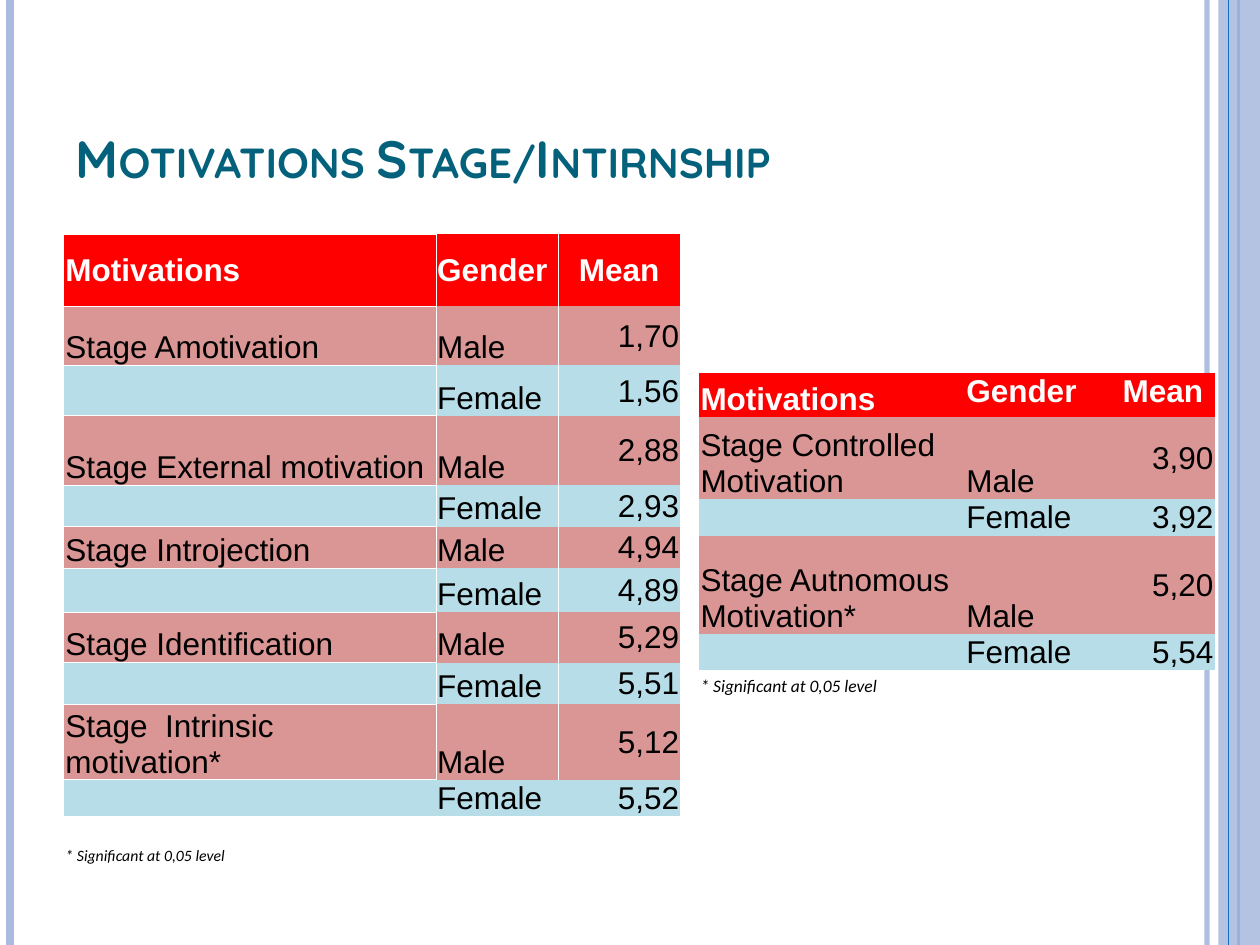
from lxml import etree
from pptx import Presentation
from pptx.dml.color import RGBColor
from pptx.enum.shapes import MSO_CONNECTOR, MSO_SHAPE
from pptx.enum.text import MSO_ANCHOR, PP_ALIGN
from pptx.oxml.ns import qn
from pptx.util import Inches, Pt

LINE = MSO_CONNECTOR.STRAIGHT
RECTANGLE = MSO_SHAPE.RECTANGLE
TOP, MIDDLE, BOTTOM = MSO_ANCHOR.TOP, MSO_ANCHOR.MIDDLE, MSO_ANCHOR.BOTTOM
LEFT, CENTER, RIGHT = PP_ALIGN.LEFT, PP_ALIGN.CENTER, PP_ALIGN.RIGHT

LAVENDER = RGBColor(0xAB, 0xBB, 0xDF)
BLUE = RGBColor(0x0F, 0x6F, 0xC6)
TEAL = RGBColor(0x04, 0x61, 0x7B)
RED = RGBColor(0xFF, 0x00, 0x00)
ROSE = RGBColor(0xDA, 0x96, 0x94)
PALE_BLUE = RGBColor(0xB7, 0xDE, 0xE8)
WHITE = RGBColor(0xFF, 0xFF, 0xFF)
BLACK = RGBColor(0x00, 0x00, 0x00)

PLAIN_TABLE_STYLE = "{2D5ABB26-0587-4C30-8999-92F81FD0307C}"
HEADINGS = ("Motivations", "Gender", "Mean")
NOTE = "* Significant at 0,05 level"

# Motivation, mean of males, mean of females
STAGE_MEANS = [
    ("Stage Amotivation", "1,70", "1,56"),
    ("Stage External motivation", "2,88", "2,93"),
    ("Stage Introjection", "4,94", "4,89"),
    ("Stage Identification", "5,29", "5,51"),
    ("Stage  Intrinsic motivation*", "5,12", "5,52"),
]
COMBINED_MEANS = [
    ("Stage Controlled Motivation", "3,90", "3,92"),
    ("Stage Autnomous Motivation*", "5,20", "5,54"),
]


def set_alpha(fill_parent, percent):
    color = fill_parent.find(f".//{qn('a:solidFill')}/{qn('a:srgbClr')}")
    etree.SubElement(color, qn("a:alpha")).set("val", str(percent * 1000))


def add_rule(slide, x, color, width, alpha=None):
    rule = slide.shapes.add_connector(LINE, Inches(x), 0, Inches(x), Inches(7.5))
    rule.line.color.rgb = color
    rule.line.width = Pt(width)
    properties = rule._element.spPr
    if alpha:
        set_alpha(properties, alpha)
    etree.SubElement(properties, qn("a:effectLst"))


def add_side_band(slide):
    band = slide.shapes.add_shape(RECTANGLE, Inches(9.67), 0, Inches(0.33), Inches(7.5))
    band.shadow.inherit = False
    band.fill.solid()
    band.fill.fore_color.rgb = LAVENDER
    band.line.fill.background()
    set_alpha(band._element.spPr, 87)


def set_title(slide, text):
    title = slide.shapes.title
    title.left, title.top = Inches(0.5), Inches(0.3)
    title.width, title.height = Inches(8.17), Inches(1.25)
    title.text_frame.vertical_anchor = BOTTOM
    paragraph = title.text_frame.paragraphs[0]
    paragraph.alignment = LEFT
    run = paragraph.add_run()
    run.text = text
    run.font.name, run.font.size, run.font.bold = "Quicksand", Pt(30), True
    run.font.color.rgb = TEAL
    run._r.get_or_add_rPr().set("cap", "small")


def add_borders(cell, sides):
    """Thin white borders; sides must come in the order L, R, T, B."""
    for side in sides:
        border = etree.SubElement(cell._tc.get_or_add_tcPr(), qn(f"a:ln{side}"))
        border.set("w", str(Pt(0.5)))
        fill = etree.SubElement(border, qn("a:solidFill"))
        etree.SubElement(fill, qn("a:srgbClr")).set("val", str(WHITE))


def fill_cell(cell, text, fill, anchor=BOTTOM, align=LEFT, size=18,
              font_name="Arial", color=BLACK, bold=False, italic=False):
    cell.margin_left = cell.margin_right = cell.margin_top = Inches(0.01)
    cell.margin_bottom = 0
    cell.vertical_anchor = anchor
    if fill is None:
        cell.fill.background()
    else:
        cell.fill.solid()
        cell.fill.fore_color.rgb = fill
    cell.text = text
    paragraph = cell.text_frame.paragraphs[0]
    paragraph.alignment = align
    font = paragraph.font
    font.name, font.size, font.bold, font.italic = font_name, Pt(size), bold, italic
    font.color.rgb = color
    if not text:
        # An empty cell takes its line height from the end mark
        end_mark = etree.SubElement(paragraph._p, qn("a:endParaRPr"))
        end_mark.set("sz", str(size * 100))


def add_means_table(slide, left, top, widths, heights, means,
                    heading_anchors, note_size, ruled=False):
    table = slide.shapes.add_table(
        len(heights), len(widths), Inches(left), Inches(top),
        Inches(sum(widths)), Inches(sum(heights))).table
    table.first_row = table.horz_banding = False
    table._tbl.tblPr.find(qn("a:tableStyleId")).text = PLAIN_TABLE_STYLE
    for column, width in zip(table.columns, widths):
        column.width = Inches(width)
    for row, height in zip(table.rows, heights):
        row.height = Inches(height)

    # White rules around the motivations column
    if ruled:
        last = 2 * len(means)
        for row in range(last):
            add_borders(table.cell(row, 0), "RTB")
            add_borders(table.cell(row, 1), "L")
        add_borders(table.cell(last, 0), "T")

    # Heading row
    for column, (heading, anchor) in enumerate(zip(HEADINGS, heading_anchors)):
        fill_cell(table.cell(0, column), heading, RED, anchor,
                  CENTER if heading == "Mean" else LEFT, color=WHITE, bold=True)

    # A male and a female row for each motivation
    row = 1
    for motivation, male, female in means:
        for label, gender, mean, fill in ((motivation, "Male", male, ROSE),
                                          ("", "Female", female, PALE_BLUE)):
            fill_cell(table.cell(row, 0), label, fill)
            fill_cell(table.cell(row, 1), gender, fill)
            fill_cell(table.cell(row, 2), mean, fill, MIDDLE, RIGHT)
            row += 1

    # Note row
    for column, text in enumerate((NOTE, "", "")):
        fill_cell(table.cell(row, column), text, None, size=note_size,
                  font_name="Calibri", italic=True)


def main():
    presentation = Presentation()
    presentation.slide_width, presentation.slide_height = Inches(10), Inches(7.5)
    slide = presentation.slides.add_slide(presentation.slide_layouts[5])

    # Side decoration
    add_rule(slide, 9.58, LAVENDER, 3, alpha=93)
    add_rule(slide, 0.08, LAVENDER, 4.5)
    add_rule(slide, 9.83, BLUE, 1.5)
    add_side_band(slide)
    add_rule(slide, 9.75, BLUE, 0.75)

    set_title(slide, "Motivations Stage/Intirnship")

    add_means_table(
        slide, 0.51, 1.86, (2.95, 0.97, 0.97),
        (0.57, 0.47, 0.4, 0.55, 0.33, 0.33, 0.35, 0.4, 0.33, 0.6, 0.27, 0.39),
        STAGE_MEANS, (MIDDLE, MIDDLE, MIDDLE), note_size=9, ruled=True)
    add_means_table(
        slide, 5.55, 2.96, (2.11, 1.16, 0.82),
        (0.35, 0.65, 0.29, 0.78, 0.25, 0.21),
        COMBINED_MEANS, (BOTTOM, TOP, TOP), note_size=10)

    presentation.save("out.pptx")


if __name__ == "__main__":
    main()
